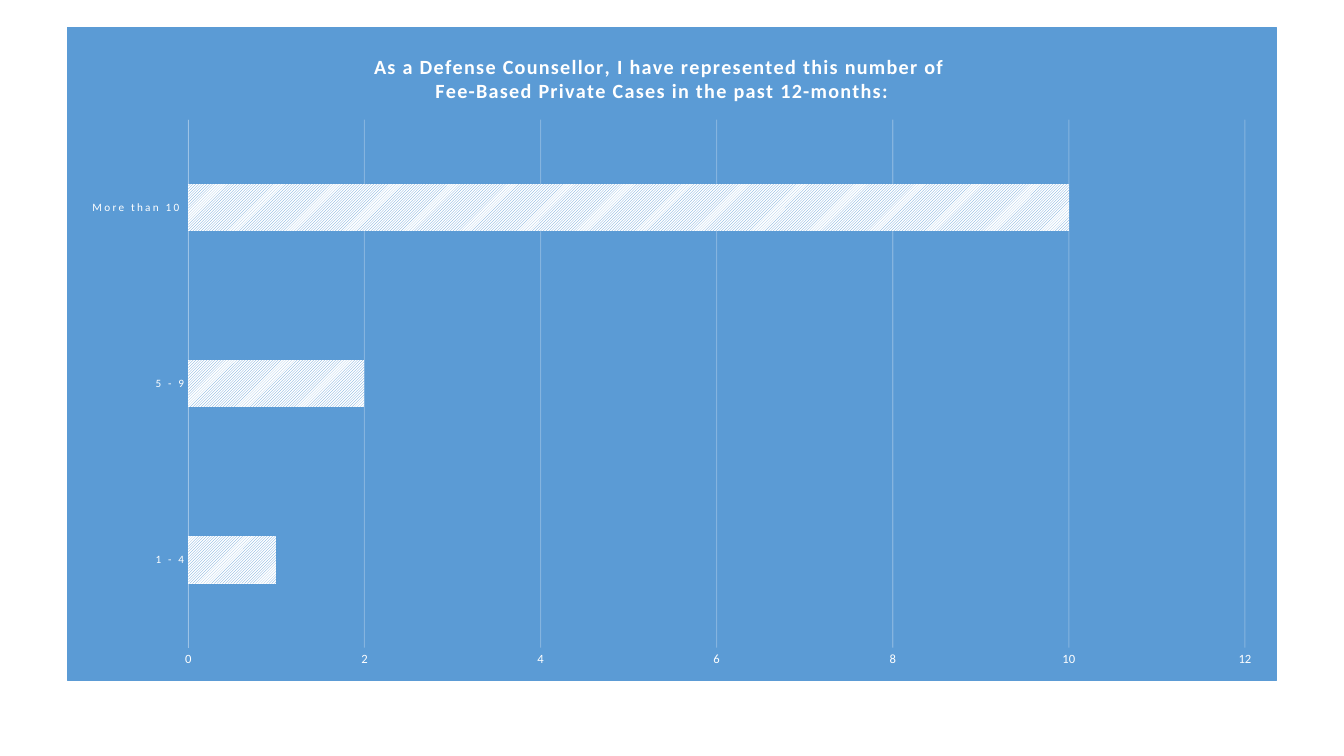
from dataclasses import dataclass

from lxml import etree
from pptx import Presentation
from pptx.chart.data import CategoryChartData
from pptx.dml.color import RGBColor
from pptx.enum.chart import XL_CHART_TYPE as ChartType, XL_TICK_MARK as TickMark
from pptx.enum.dml import MSO_PATTERN as Pattern
from pptx.oxml import parse_xml
from pptx.oxml.ns import nsdecls, qn
from pptx.util import Pt

TITLE = [
    "As a Defense Counsellor, I have represented this number of ",
    "Fee-Based Private Cases in the past 12-months:",
]
CASES = {"1 - 4": 1, "5 - 9": 2, "More than 10\u00a0": 10}

PAGE_SIZE = (1344, 756)
CHART_BOX = (67, 27, 1210, 654)  # left, top, width, height
PLOT_BOX = (188, 119, 1058, 529)
TITLE_AT = (371, 50)
EMU_PER_PX = 914400 / 100.8


@dataclass(frozen=True)
class Theme:
    font: str = "Calibri"
    blue: str = "5B9BD5"
    pale_blue: str = "9DC3E6"
    white: str = "FFFFFF"
    title_size: float = 14.4
    category_size: float = 8
    value_size: float = 9
    grid_opacity: int = 25


THEME = Theme()


def emu(px):
    return round(px * EMU_PER_PX)


def style_font(font, size, color=THEME.white, bold=False, spacing=0):
    """Format a font; spacing is the letter spacing in points."""
    font.name, font.size, font.bold = THEME.font, Pt(size), bold
    font.color.rgb = RGBColor.from_string(color)
    if spacing:
        font._element.set("spc", str(round(spacing * 100)))


def write_text(frame, lines, **style):
    for number, line in enumerate(lines):
        para = frame.add_paragraph() if number else frame.paragraphs[0]
        span = para.add_run()
        span.text = line
        style_font(span.font, **style)


def style_line(line, color, width, opacity=100):
    line.color.rgb = RGBColor.from_string(color)
    line.width = Pt(width)
    if opacity < 100:
        tint = line._get_or_add_ln().find(".//" + qn("a:srgbClr"))
        etree.SubElement(tint, qn("a:alpha"), val=str(opacity * 1000))


def place(element, index, left, top, width=None, height=None):
    """Give a chart part a fixed place, as fractions of the chart."""
    chart_left, chart_top, chart_width, chart_height = CHART_BOX
    fractions = {"x": (left - chart_left) / chart_width, "y": (top - chart_top) / chart_height}
    target = ""
    if width:
        target = '<c:layoutTarget val="inner"/>'
        fractions |= {"w": width / chart_width, "h": height / chart_height}
    modes = "".join(f'<c:{key}Mode val="edge"/>' for key in "xy")
    values = "".join(f'<c:{key} val="{value:.3f}"/>' for key, value in fractions.items())
    for old in element.findall(qn("c:layout")):
        element.remove(old)
    element.insert(index, parse_xml(
        f'<c:layout {nsdecls("c")}><c:manualLayout>{target}{modes}{values}'
        "</c:manualLayout></c:layout>"))


def fill_background(chart):
    paint = f'<a:solidFill><a:srgbClr val="{THEME.blue}"/></a:solidFill>'
    space = chart._chartSpace
    space.find(qn("c:chart")).addnext(parse_xml(
        f'<c:spPr {nsdecls("c", "a")}>{paint}<a:ln w="{Pt(0.75)}">{paint}</a:ln></c:spPr>'))
    for corners in space.findall(qn("c:roundedCorners")):
        space.remove(corners)
    space.find(qn("c:chart")).addprevious(parse_xml(
        f'<c:roundedCorners {nsdecls("c")} val="0"/>'))


def add_cases_chart(page):
    data = CategoryChartData()
    data.categories = list(CASES)
    data.add_series("Series 1", list(CASES.values()))
    chart = page.shapes.add_chart(
        ChartType.BAR_CLUSTERED, *map(emu, CHART_BOX), data).chart
    chart.has_legend = False
    style_font(chart.font, THEME.value_size)
    fill_background(chart)

    chart.has_title = True
    title = chart.chart_title
    write_text(title.text_frame, TITLE, size=THEME.title_size, bold=True, spacing=1)
    place(title._element, 1, *TITLE_AT)
    place(chart._chartSpace.find(".//" + qn("c:plotArea")), 0, *PLOT_BOX)

    plot = chart.plots[0]
    plot.gap_width, plot.overlap, plot.vary_by_categories = 269, -20, False
    fill = plot.series[0].format.fill
    fill.patterned()
    fill.pattern = Pattern.LIGHT_UPWARD_DIAGONAL
    fill.fore_color.rgb = RGBColor.from_string(THEME.blue)
    fill.back_color.rgb = RGBColor.from_string(THEME.white)

    categories, values = chart.category_axis, chart.value_axis
    for axis in (categories, values):
        axis.major_tick_mark = axis.minor_tick_mark = TickMark.NONE
    style_font(categories.tick_labels.font, THEME.category_size, spacing=1.5)
    style_line(categories.format.line, THEME.pale_blue, 0.25)
    style_font(values.tick_labels.font, THEME.value_size)
    values.format.line.fill.background()
    values.minimum_scale, values.maximum_scale, values.major_unit = 0, 12, 2
    values.has_major_gridlines = True
    style_line(values.major_gridlines.format.line, THEME.white, 0.75, THEME.grid_opacity)


def main():
    deck = Presentation()
    deck.slide_width, deck.slide_height = map(emu, PAGE_SIZE)
    add_cases_chart(deck.slides.add_slide(deck.slide_layouts[6]))
    deck.save("out.pptx")


if __name__ == "__main__":
    main()
